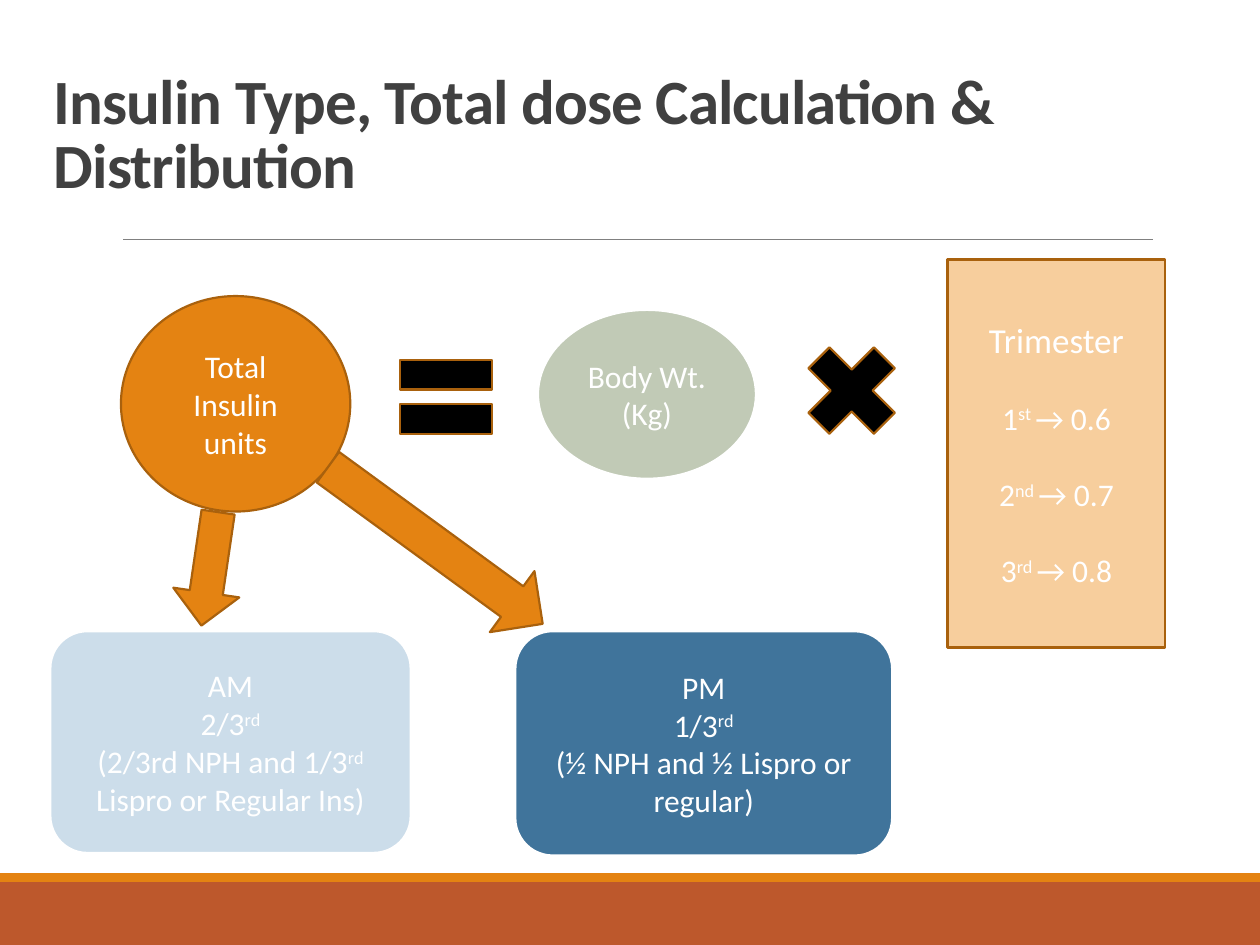
from lxml import etree
from pptx import Presentation
from pptx.dml.color import RGBColor as RGB
from pptx.enum.shapes import MSO_CONNECTOR as Conn, MSO_SHAPE as Geo
from pptx.enum.text import MSO_ANCHOR as Anchor, PP_ALIGN as Align
from pptx.oxml.ns import qn
from pptx.util import Inches, Pt

WHITE = RGB(0xFF, 0xFF, 0xFF)
BLACK = RGB(0, 0, 0)
DARK = RGB(0x40, 0x40, 0x40)
GRAY = RGB(0x80, 0x80, 0x80)
RUST = RGB(0xBD, 0x58, 0x2C)
ORANGE = RGB(0xE4, 0x83, 0x12)
BROWN = RGB(0xA9, 0x61, 0x0D)
SAGE = RGB(0xC1, 0xCA, 0xB6)
PEACH = RGB(0xF7, 0xCE, 0x9D)
PALE = RGB(0xCC, 0xDD, 0xEA)
BLUE = RGB(0x40, 0x74, 0x9B)

COLS, ROWS = 100, 75  # grid cells across and down the slide


class Deck:
    font = "Calibri"
    size = 18
    edge = 1.25

    def __init__(self, wide, high):
        self.prs = Presentation()
        self.prs.slide_width, self.prs.slide_height = Inches(wide), Inches(high)
        self.slide = self.prs.slides.add_slide(self.prs.slide_layouts[6])

    def grid(self, *cells):
        """Turn column, row, column, row ... into lengths."""
        units = (self.prs.slide_width / COLS, self.prs.slide_height / ROWS)
        return [round(cell * units[i % 2]) for i, cell in enumerate(cells)]

    def style(self, run, size, color, bold=False):
        font = run.font
        font.name, font.size, font.bold = self.font, Pt(size), bold
        font.color.rgb = color

    def title(self, text, *at):
        frame = self.slide.shapes.add_textbox(*self.grid(*at)).text_frame
        frame.word_wrap = True
        frame.vertical_anchor = Anchor.BOTTOM
        frame.text = text
        para = frame.paragraphs[0]
        para.line_spacing = 0.85
        run = para.runs[0]
        self.style(run, 36, DARK, True)
        run.font._element.set("spc", "-50")

    def rule(self, *ends):
        line = self.slide.shapes.add_connector(Conn.STRAIGHT, *self.grid(*ends))
        line.line.color.rgb = GRAY
        line.line.width = Pt(0.5)
        etree.SubElement(line._element.spPr, qn("a:effectLst"))

    def shape(self, kind, at, fill, edge=None, turn=0):
        item = self.slide.shapes.add_shape(kind, *self.grid(*at))
        item.shadow.inherit = False
        item.rotation = turn
        item.fill.solid()
        item.fill.fore_color.rgb = fill
        if edge is None:
            item.line.fill.background()
        else:
            item.line.color.rgb = edge
            item.line.width = Pt(self.edge)
        return item

    def label(self, item, lines, gap=0, head=None):
        """Write centred lines; parts between ^ marks are superscript."""
        frame = item.text_frame
        frame.word_wrap = True
        frame.vertical_anchor = Anchor.MIDDLE
        for i, line in enumerate(lines):
            para = frame.paragraphs[0] if i == 0 else frame.add_paragraph()
            para.alignment = Align.CENTER
            if i and gap:
                para.space_before = Pt(gap)
            size = head if head and i == 0 else self.size
            for j, part in enumerate(line.split("^")):
                if not part:
                    continue
                run = para.add_run()
                run.text = part
                self.style(run, size, WHITE)
                if j % 2:
                    run.font._element.set("baseline", "30000")


def main():
    deck = Deck(10, 7.5)

    # Footer bands, title and rule
    deck.shape(Geo.RECTANGLE, (0, 70, COLS, 5), RUST)
    deck.shape(Geo.RECTANGLE, (0, 69.3, COLS, 0.7), ORANGE)
    deck.rule(9.8, 19, 91.5, 19)
    deck.title("Insulin Type, Total dose Calculation & Distribution",
               3.3, 5.6, 96, 10.9)

    # Dose equation: total = weight x trimester factor
    total = deck.shape(Geo.OVAL, (9.6, 23.5, 18.2, 17.1), ORANGE, BROWN)
    deck.label(total, ["Total Insulin units"])
    deck.shape(Geo.MATH_EQUAL, (30.4, 26.5, 10, 10), BLACK, BROWN)
    deck.shape(Geo.MATH_MULTIPLY, (62.6, 26, 10, 10), BLACK, BROWN)
    weight = deck.shape(Geo.OVAL, (42.7, 24.6, 17.3, 13.4), SAGE, WHITE)
    deck.label(weight, ["Body Wt. (Kg)"])
    factor = deck.shape(Geo.RECTANGLE, (75.2, 20.6, 17.3, 30.8), PEACH, BROWN)
    deck.label(factor, ["Trimester", "1^st ^→ 0.6", "2^nd ^→ 0.7", "3^rd ^→ 0.8"],
               gap=22, head=20)

    # Arrows from the total to each share
    deck.shape(Geo.RIGHT_ARROW, (24, 40.3, 21.1, 6), ORANGE, BROWN, 36.1)
    deck.shape(Geo.DOWN_ARROW, (14, 40.6, 5.3, 9.1), ORANGE, BROWN, 8.4)

    # Morning and evening shares
    shares = [
        ((4, 50.1, 28.6, 17.6), PALE,
         ["AM", "2/3^rd", "(2/3rd NPH and 1/3^rd^ Lispro or Regular Ins)"]),
        ((40.9, 50.1, 29.9, 17.8), BLUE,
         ["PM", "1/3^rd", "(½ NPH and ½ Lispro or regular)"]),
    ]
    for at, fill, lines in shares:
        deck.label(deck.shape(Geo.ROUNDED_RECTANGLE, at, fill, WHITE), lines)

    deck.prs.save("out.pptx")


if __name__ == "__main__":
    main()
